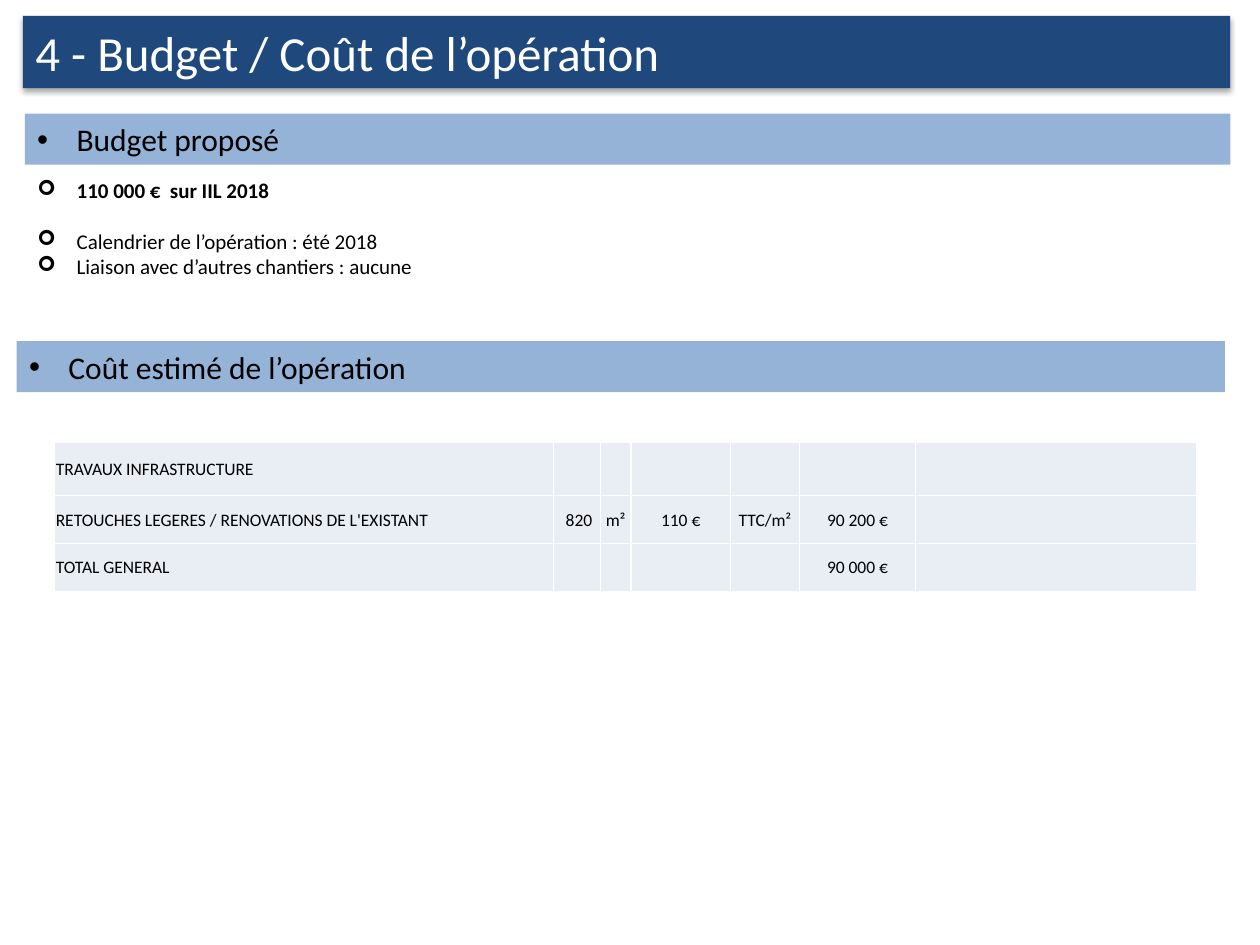
from lxml import etree
from pptx import Presentation
from pptx.dml.color import RGBColor
from pptx.enum.shapes import MSO_SHAPE
from pptx.enum.text import MSO_ANCHOR, MSO_AUTO_SIZE, PP_ALIGN
from pptx.oxml.ns import qn
from pptx.util import Pt

LEFT, CENTER = PP_ALIGN.LEFT, PP_ALIGN.CENTER
MIDDLE = MSO_ANCHOR.MIDDLE
FIXED = MSO_AUTO_SIZE.NONE
RECT = MSO_SHAPE.RECTANGLE

THEME = {
    "font": "Calibri",
    "navy": "1F497D", "blue": "95B3D7", "pale": "E9EDF4",
    "white": "FFFFFF", "black": "000000",
    "title": 28, "head": 18, "body": 12, "cell": 10,
}

TITLE = ("4 - Budget / Coût de l’opération", (13, 9.1, 690, 41.3))
BANDS = [
    ("Budget proposé", (14.2, 65, 689, 29.1)),
    ("Coût estimé de l’opération", (9.5, 195, 690.5, 29.1)),
]
NOTES = [
    ("110 000 €  sur IIL 2018", True, 0),
    ("Calendrier de l’opération : été 2018", False, 14.6),
    ("Liaison avec d’autres chantiers : aucune", False, 0),
]
NOTE_BOX = (14.2, 97.9, 686, 80)
INDENT = 22.5

ROWS = [
    ["TRAVAUX INFRASTRUCTURE", "", "", "", "", "", ""],
    ["RETOUCHES LEGERES / RENOVATIONS DE L'EXISTANT",
     "\u00a0820", "m²", "110 €", "TTC/m²", "90 200 €", ""],
    ["TOTAL GENERAL", "", "", "", "", "90 000 €", ""],
]
WIDTHS = [285, 27, 17.3, 57, 39.4, 66.3, 161]
HEIGHTS = [30.2, 27.4, 27.4]
TABLE_AT = (31.2, 253)


def color(name):
    return RGBColor.from_string(THEME[name])


def place(shape, box):
    shape.left, shape.top, shape.width, shape.height = map(Pt, box)


def paint(shape, name):
    shape.fill.solid()
    shape.fill.fore_color.rgb = color(name)
    shape.line.fill.background()


def write(para, text, size, tint="black", bold=False, align=LEFT):
    para.alignment = align
    run = para.add_run()
    run.text = text
    font = run.font
    font.name, font.size, font.bold = THEME["font"], Pt(THEME[size]), bold
    font.color.rgb = color(tint)


def bullet(para, mark, face):
    props = para._p.get_or_add_pPr()
    props.set("marL", str(Pt(INDENT)))
    props.set("indent", str(-Pt(INDENT)))
    etree.SubElement(props, qn("a:buFont"), typeface=face)
    etree.SubElement(props, qn("a:buChar"), char=mark)


def shade(shape):
    effects = etree.SubElement(shape._element.spPr, qn("a:effectLst"))
    shadow = etree.SubElement(
        effects, qn("a:outerShdw"), blurRad=str(Pt(3.1)), dist=str(Pt(1.8)),
        dir="5400000", rotWithShape="0")
    tint = etree.SubElement(shadow, qn("a:srgbClr"), val=THEME["black"])
    etree.SubElement(tint, qn("a:alpha"), val="35000")


def border(cell):
    props = cell._tc.get_or_add_tcPr()
    for side in ("lnL", "lnR", "lnT", "lnB"):
        line = etree.SubElement(props, qn("a:" + side), w=str(Pt(1)))
        fill = etree.SubElement(line, qn("a:solidFill"))
        etree.SubElement(fill, qn("a:srgbClr"), val=THEME["white"])


def add_title(slide):
    text, box = TITLE
    title = slide.shapes.title
    place(title, box)
    paint(title, "navy")
    shade(title)
    frame = title.text_frame
    frame.auto_size, frame.vertical_anchor = FIXED, MIDDLE
    write(frame.paragraphs[0], text, "title", "white")


def add_band(slide, text, box):
    band = slide.shapes.add_shape(RECT, *map(Pt, box))
    band.shadow.inherit = False
    paint(band, "blue")
    frame = band.text_frame
    frame.word_wrap, frame.vertical_anchor = True, MIDDLE
    para = frame.paragraphs[0]
    write(para, text, "head")
    bullet(para, "•", "Arial")


def add_notes(slide):
    frame = slide.shapes.add_textbox(*map(Pt, NOTE_BOX)).text_frame
    frame.word_wrap = True
    for i, (text, bold, gap) in enumerate(NOTES):
        para = frame.add_paragraph() if i else frame.paragraphs[0]
        para.space_before = Pt(gap)
        write(para, text, "body", bold=bold)
        bullet(para, "➢", "Wingdings")


def add_costs(slide):
    size = (sum(WIDTHS), sum(HEIGHTS))
    table = slide.shapes.add_table(
        len(ROWS), len(WIDTHS), *map(Pt, TABLE_AT + size)).table
    table.first_row = table.horz_banding = False
    for col, width in zip(table.columns, WIDTHS):
        col.width = Pt(width)
    for row, height, texts in zip(table.rows, HEIGHTS, ROWS):
        row.height = Pt(height)
        for i, (cell, text) in enumerate(zip(row.cells, texts)):
            cell.margin_left = cell.margin_right = cell.margin_top = Pt(0.7)
            cell.margin_bottom = 0
            cell.vertical_anchor = MIDDLE
            border(cell)
            cell.fill.solid()
            cell.fill.fore_color.rgb = color("pale")
            if text:
                write(cell.text_frame.paragraphs[0], text, "cell",
                      align=CENTER if i else LEFT)


def main():
    deck = Presentation()
    deck.slide_width, deck.slide_height = Pt(720), Pt(540)
    slide = deck.slides.add_slide(deck.slide_layouts[5])
    add_title(slide)
    for text, box in BANDS:
        add_band(slide, text, box)
    add_notes(slide)
    add_costs(slide)
    deck.save("out.pptx")


if __name__ == "__main__":
    main()
